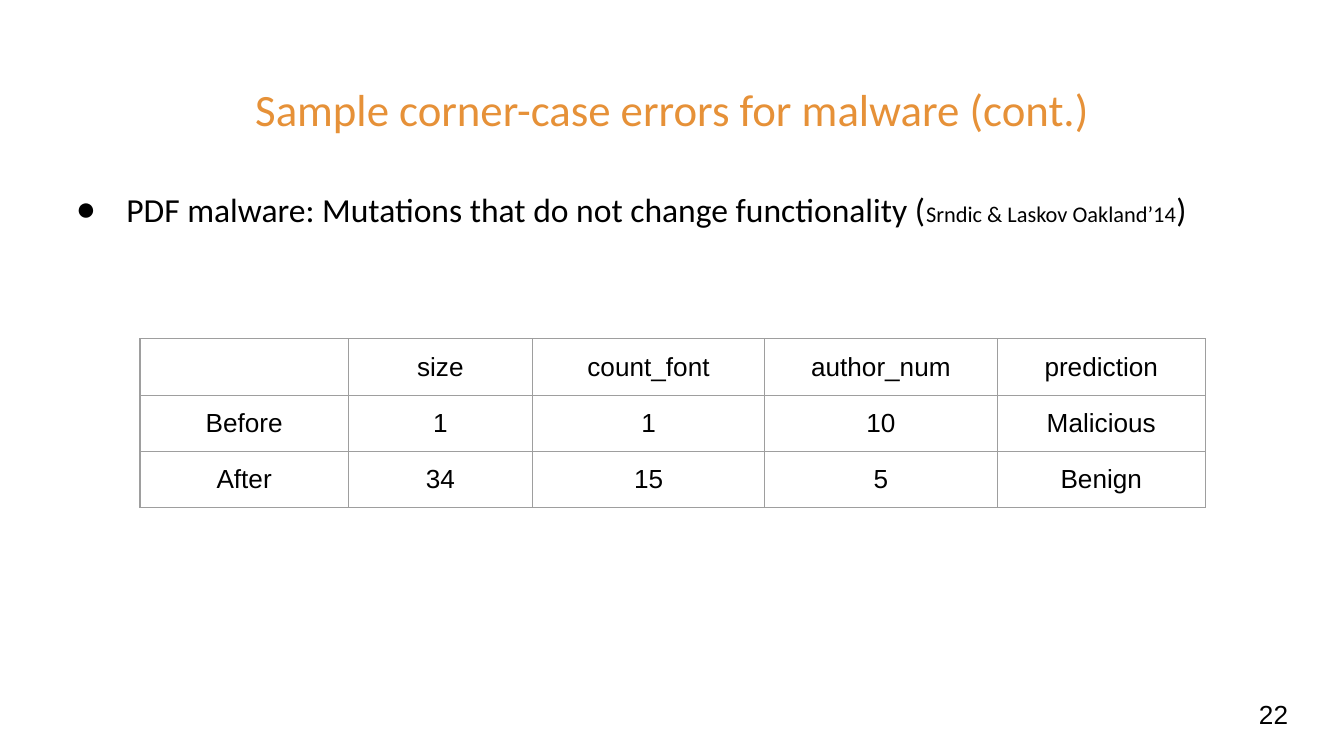
from dataclasses import dataclass

from lxml import etree
from pptx import Presentation
from pptx.dml.color import RGBColor
from pptx.enum import text
from pptx.oxml import ns
from pptx.util import Pt


@dataclass(frozen=True)
class Theme:
    heading_font: str = "Calibri"
    plain_font: str = "Arial"
    accent: str = "E69138"
    ink: str = "000000"
    rule: str = "9E9E9E"
    title_size: float = 24
    body_size: float = 18
    citation_size: float = 12
    small_size: float = 14
    rule_width: float = 0.75
    inset: float = 7.2


THEME = Theme()
COLUMN_WIDTHS = [111.6, 98.6, 124.5, 124.5, 111.6]
ROW_HEIGHT = 30.2
MUTATIONS = [
    ["", "size", "count_font", "author_num", "prediction"],
    ["Before", "1", "1", "10", "Malicious"],
    ["After", "34", "15", "5", "Benign"],
]


def set_font(font, name, size, color):
    font.name = name
    font.size = Pt(size)
    font.color.rgb = RGBColor.from_string(color)


def set_insets(target):
    """Give a text frame or a table cell the same inset on all sides."""
    for side in ("left", "top", "right", "bottom"):
        setattr(target, f"margin_{side}", Pt(THEME.inset))


def place(shape, left, top, width, height, anchor):
    shape.left, shape.top = Pt(left), Pt(top)
    shape.width, shape.height = Pt(width), Pt(height)
    frame = shape.text_frame
    frame.word_wrap = True
    frame.auto_size = text.MSO_AUTO_SIZE.NONE
    frame.vertical_anchor = anchor
    set_insets(frame)
    return frame.paragraphs[0]


def add_title(slide, title):
    paragraph = place(slide.shapes.title, 24.5, 35.3, 671, 45.4, text.MSO_ANCHOR.MIDDLE)
    paragraph.text = title
    paragraph.alignment = text.PP_ALIGN.CENTER
    set_font(paragraph.font, THEME.heading_font, THEME.title_size, THEME.accent)


def add_bullet(paragraph, indent, hanging):
    properties = paragraph._p.get_or_add_pPr()
    properties.set("marL", str(Pt(indent)))
    properties.set("indent", str(-Pt(hanging)))
    color = etree.SubElement(properties, ns.qn("a:buClr"))
    etree.SubElement(color, ns.qn("a:srgbClr"), val=THEME.ink)
    etree.SubElement(properties, ns.qn("a:buChar"), char="●")


def add_body(slide, pieces):
    """Write one bullet from (wording, size) pieces."""
    paragraph = place(slide.placeholders[1], 24.5, 90.7, 671, 269.3, text.MSO_ANCHOR.TOP)
    paragraph.line_spacing = 1.15
    paragraph.space_before = Pt(0)
    paragraph.space_after = Pt(3)
    add_bullet(paragraph, 36, 27)
    for wording, size in pieces:
        run = paragraph.add_run()
        run.text = wording
        set_font(run.font, THEME.heading_font, size, THEME.ink)


def add_borders(cell):
    properties = cell._tc.get_or_add_tcPr()
    for index, side in enumerate("LRTB"):
        line = etree.Element(ns.qn(f"a:ln{side}"), w=str(Pt(THEME.rule_width)))
        fill = etree.SubElement(line, ns.qn("a:solidFill"))
        etree.SubElement(fill, ns.qn("a:srgbClr"), val=THEME.rule)
        properties.insert(index, line)


def fill_cell(cell, wording):
    cell.fill.background()
    add_borders(cell)
    if not wording:
        return
    cell.vertical_anchor = text.MSO_ANCHOR.MIDDLE
    set_insets(cell)
    paragraph = cell.text_frame.paragraphs[0]
    paragraph.text = wording
    paragraph.alignment = text.PP_ALIGN.CENTER
    set_font(paragraph.font, THEME.plain_font, THEME.small_size, THEME.ink)


def add_grid(slide, rows, left, top):
    frame = slide.shapes.add_table(
        len(rows), len(COLUMN_WIDTHS), Pt(left), Pt(top),
        Pt(sum(COLUMN_WIDTHS)), Pt(ROW_HEIGHT * len(rows)))
    table = frame.table
    table.first_row = table.horz_banding = False
    for column, width in zip(table.columns, COLUMN_WIDTHS):
        column.width = Pt(width)
    for row, wordings in zip(table.rows, rows):
        row.height = Pt(ROW_HEIGHT)
        for cell, wording in zip(row.cells, wordings):
            fill_cell(cell, wording)


def add_page_number(slide, number):
    box = slide.shapes.add_textbox(0, 0, 0, 0)
    paragraph = place(box, 667.4, 367.2, 43.2, 31, text.MSO_ANCHOR.MIDDLE)
    paragraph.text = number
    set_font(paragraph.font, THEME.plain_font, THEME.small_size, THEME.ink)


def main():
    presentation = Presentation()
    presentation.slide_width, presentation.slide_height = Pt(720), Pt(405)
    slide = presentation.slides.add_slide(presentation.slide_layouts[1])
    add_title(slide, "Sample corner-case errors for malware (cont.)")
    add_body(slide, [
        ("PDF malware: Mutations that do not change functionality (", THEME.body_size),
        ("Srndic & Laskov Oakland’14", THEME.citation_size),
        (")", THEME.body_size),
    ])
    add_page_number(slide, "22")
    add_grid(slide, MUTATIONS, 75, 181.5)
    presentation.save("out.pptx")


if __name__ == "__main__":
    main()
